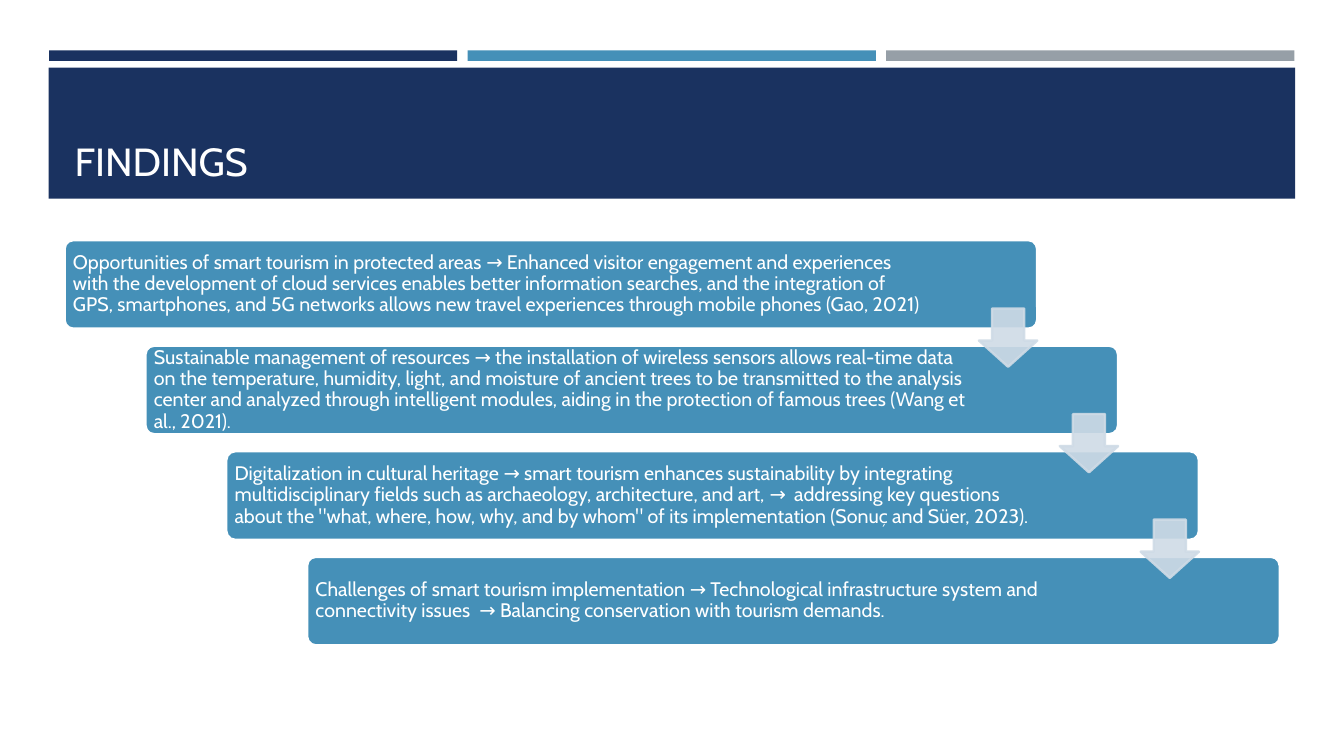
from dataclasses import dataclass

from lxml.etree import SubElement
from pptx import Presentation
from pptx.dml.color import RGBColor
from pptx.enum.shapes import MSO_SHAPE as ShapeKind
from pptx.enum.text import MSO_ANCHOR as Anchor, MSO_AUTO_SIZE as AutoSize, PP_ALIGN as Align
from pptx.oxml.ns import qn
from pptx.shapes.autoshape import Shape
from pptx.slide import Slide
from pptx.util import Pt

COLOURS = {
    "navy": "1A3260",
    "blue": "4590B8",
    "grey": "969FA7",
    "pale": "CFDBE6",
    "white": "FFFFFF",
}
FONT = "Cabin"
CARD_LEFT, CARD_TOP = 46.1, 171.5
CARD_WIDTH, CARD_HEIGHT = 694.8, 63.3
STEP_X, STEP_Y = 57.75, 75.4
TEXT_OFFSET, TEXT_HEIGHT = 1.8, 59.7
ARROW_SIZE, ARROW_OFFSET_X, ARROW_OFFSET_Y = 41.6, 653.2, 48.9
BAR_LEFT, BAR_TOP, BAR_STEP = 35, 36, 299


@dataclass(frozen=True)
class Box:
    left: float
    top: float
    width: float
    height: float


@dataclass(frozen=True)
class Finding:
    text: str
    text_width: float


FINDINGS = [
    Finding(
        "Opportunities of smart tourism in protected areas → Enhanced visitor engagement and "
        "experiences with the development of cloud services enables better information searches, "
        "and the integration of GPS, smartphones, and 5G networks allows new travel experiences "
        "through mobile phones (Gao, 2021)",
        620.6,
    ),
    Finding(
        "Sustainable management of resources → the installation of wireless sensors allows "
        "real-time data on the temperature, humidity, light, and moisture of ancient trees to be "
        "transmitted to the analysis center and analyzed through intelligent modules, aiding in "
        "the protection of famous trees (Wang et al., 2021).",
        591.1,
    ),
    Finding(
        "Digitalization in cultural heritage → smart tourism enhances sustainability by "
        "integrating multidisciplinary fields such as archaeology, architecture, and art, →  "
        'addressing key questions about the "what, where, how, why, and by whom" of its '
        "implementation (Sonuç and Süer, 2023).",
        592.6,
    ),
    Finding(
        "Challenges of smart tourism implementation → Technological infrastructure system and "
        "connectivity issues  → Balancing conservation with tourism demands.",
        591.1,
    ),
]


def colour(name: str) -> RGBColor:
    """Return the named colour."""
    return RGBColor.from_string(COLOURS[name])


def place(shape: Shape, box: Box) -> None:
    """Move and size a shape to a box given in points."""
    shape.left, shape.top = Pt(box.left), Pt(box.top)
    shape.width, shape.height = Pt(box.width), Pt(box.height)


def write_text(shape: Shape, text: str, *, size: float, anchor: Anchor,
               inset: float | None = None, line_spacing: float | None = None) -> None:
    """Put one white, left-aligned paragraph in a shape."""
    frame = shape.text_frame
    frame.word_wrap = True
    frame.auto_size = AutoSize.NONE
    frame.vertical_anchor = anchor
    if inset is not None:
        frame.margin_left = frame.margin_right = Pt(inset)
        frame.margin_top = frame.margin_bottom = Pt(inset)
    paragraph = frame.paragraphs[0]
    paragraph.alignment = Align.LEFT
    paragraph.line_spacing = line_spacing
    run = paragraph.add_run()
    run.text = text
    run.font.name, run.font.size = FONT, Pt(size)
    run.font.color.rgb = colour("white")


def draw_shape(slide: Slide, kind: ShapeKind, box: Box, fill: str, line: str | None = None,
               adjustments: tuple[float, ...] = (), opacity: int = 100) -> Shape:
    """Draw a filled preset shape, with an outline if one is named."""
    shape = slide.shapes.add_shape(
        kind, Pt(box.left), Pt(box.top), Pt(box.width), Pt(box.height))
    shape.shadow.inherit = False
    shape.fill.solid()
    shape.fill.fore_color.rgb = colour(fill)
    if line:
        shape.line.color.rgb = colour(line)
        shape.line.width = Pt(1.75)
    else:
        shape.line.fill.background()
    for index, value in enumerate(adjustments):
        shape.adjustments[index] = value
    if opacity < 100:
        for element in shape.element.spPr.iter(qn("a:srgbClr")):
            SubElement(element, qn("a:alpha"), val=str(opacity * 1000))
    return shape


def draw_header(slide: Slide) -> None:
    """Draw the three bars, the banner and the title on it."""
    for index, fill in enumerate(("navy", "blue", "grey")):
        bar = Box(BAR_LEFT + index * BAR_STEP, BAR_TOP, 291.6, 7.5)
        draw_shape(slide, ShapeKind.RECTANGLE, bar, fill)
    banner = draw_shape(slide, ShapeKind.RECTANGLE, Box(34.8, 48.4, 890.4, 93.6), "navy")
    title = slide.shapes.title
    place(title, Box(46.1, 55.4, 868.3, 79.9))
    write_text(title, "FINDINGS", size=28, anchor=Anchor.BOTTOM)
    banner.element.addnext(title.element)


def draw_finding(slide: Slide, index: int, finding: Finding) -> None:
    """Draw one step of the staircase with its text."""
    left, top = CARD_LEFT + index * STEP_X, CARD_TOP + index * STEP_Y
    draw_shape(slide, ShapeKind.ROUNDED_RECTANGLE, Box(left, top, CARD_WIDTH, CARD_HEIGHT),
               "blue", "white", (0.1,))
    text_box = slide.shapes.add_textbox(
        Pt(left + TEXT_OFFSET), Pt(top + TEXT_OFFSET), Pt(finding.text_width), Pt(TEXT_HEIGHT))
    write_text(text_box, finding.text, size=14, anchor=Anchor.MIDDLE, inset=4.2,
               line_spacing=0.9)


def draw_arrow(slide: Slide, index: int) -> None:
    """Draw the arrow that leads from one step to the next."""
    box = Box(CARD_LEFT + index * STEP_X + ARROW_OFFSET_X,
              CARD_TOP + index * STEP_Y + ARROW_OFFSET_Y, ARROW_SIZE, ARROW_SIZE)
    draw_shape(slide, ShapeKind.DOWN_ARROW, box, "pale", "pale", (0.55, 0.45), opacity=90)


def main() -> None:
    """Build and save the slide."""
    presentation = Presentation()
    presentation.slide_width, presentation.slide_height = Pt(960), Pt(540)
    slide = presentation.slides.add_slide(presentation.slide_layouts.get_by_name("Title Only"))
    slide.background.fill.solid()
    slide.background.fill.fore_color.rgb = colour("white")
    draw_header(slide)
    for index, finding in enumerate(FINDINGS):
        draw_finding(slide, index, finding)
    for index in range(len(FINDINGS) - 1):
        draw_arrow(slide, index)
    presentation.save("out.pptx")


if __name__ == "__main__":
    main()
